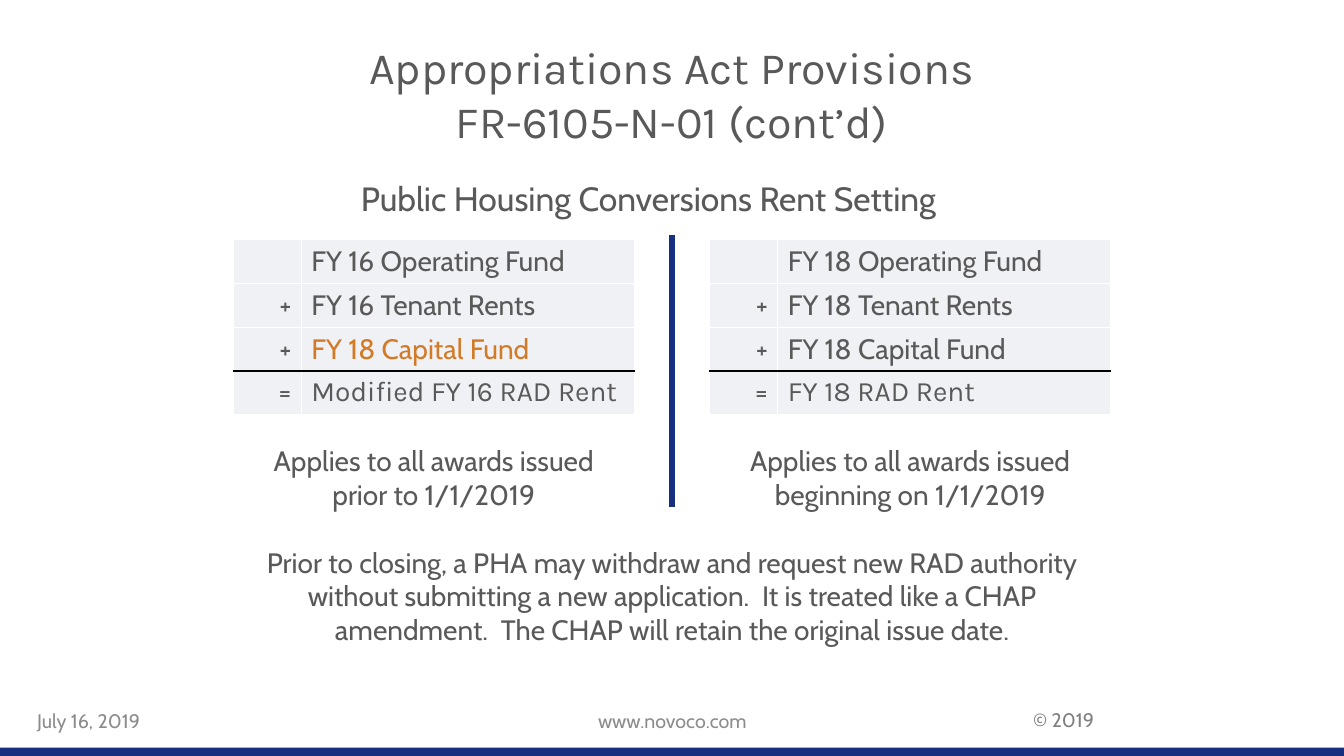
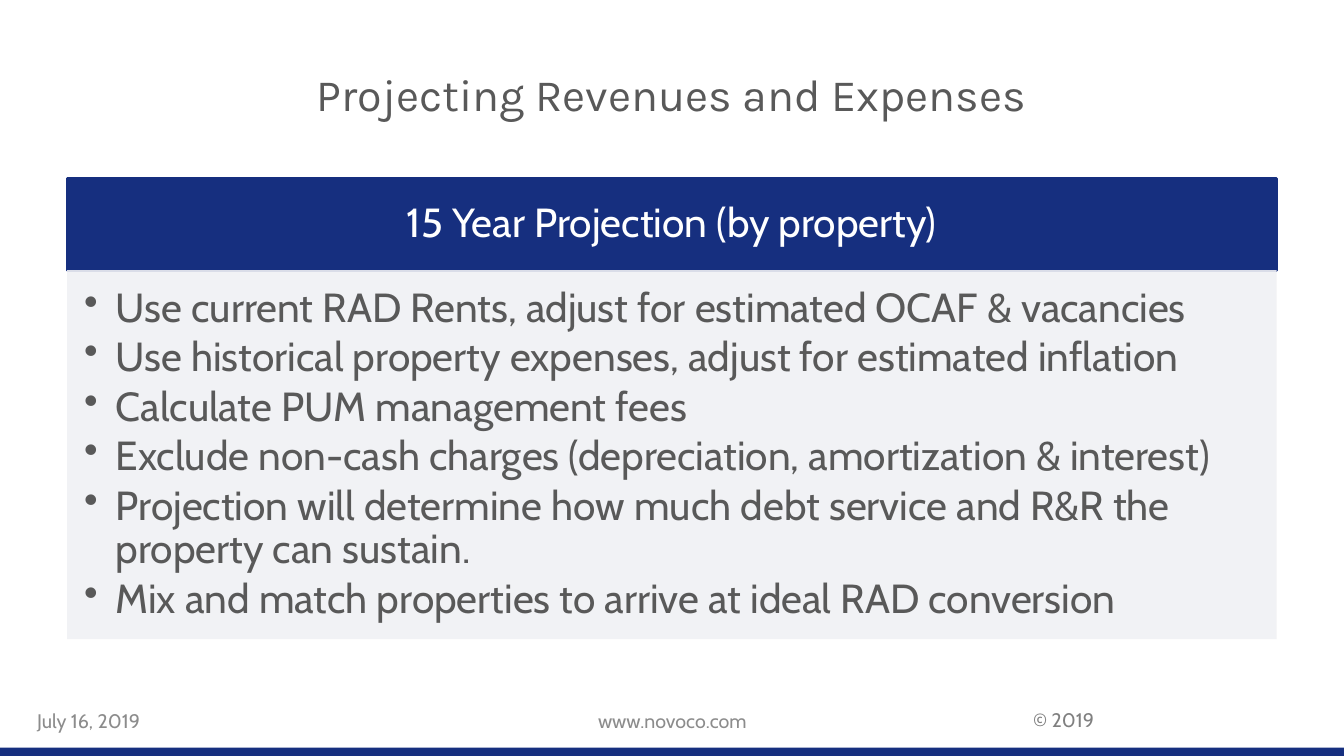
"""Two slides on RAD rent setting and on projecting revenues and expenses."""
from lxml import etree
from pptx import Presentation
from pptx.dml.color import RGBColor
from pptx.enum.shapes import MSO_CONNECTOR, MSO_SHAPE
from pptx.enum.text import MSO_ANCHOR, PP_ALIGN
from pptx.oxml.ns import qn
from pptx.util import Pt

LEFT, CENTER, RIGHT = PP_ALIGN.LEFT, PP_ALIGN.CENTER, PP_ALIGN.RIGHT
TOP, MIDDLE = MSO_ANCHOR.TOP, MSO_ANCHOR.MIDDLE
RECTANGLE, STRAIGHT = MSO_SHAPE.RECTANGLE, MSO_CONNECTOR.STRAIGHT

NAVY = RGBColor(0x16, 0x2F, 0x7F)
PALE = RGBColor(0xF0, 0xF1, 0xF4)
ORANGE = RGBColor(0xD3, 0x7A, 0x26)
WHITE = RGBColor(0xFF, 0xFF, 0xFF)
BLACK = RGBColor(0x00, 0x00, 0x00)
TEXT_GRAY = RGBColor(0x59, 0x59, 0x59)
FOOTER_GRAY = RGBColor(0x8C, 0x8C, 0x8C)
COPYRIGHT_GRAY = RGBColor(0x80, 0x80, 0x80)
BODY_FONT, TITLE_FONT = "Cabin", "Karla"


def add_span(para, text, size, color=TEXT_GRAY, font=BODY_FONT):
    span = para.add_run()
    span.text = text
    span.font.size = Pt(size)
    span.font.name = font
    span.font.color.rgb = color


def add_box(slide, place, lines, size, color=TEXT_GRAY, font=BODY_FONT,
            align=CENTER, anchor=TOP, wrap=True):
    box = slide.shapes.add_textbox(*map(Pt, place))
    frame = box.text_frame
    frame.word_wrap = wrap
    frame.vertical_anchor = anchor
    para = frame.paragraphs[0]
    para.alignment = align
    for index, line in enumerate(lines):
        if index:
            para.add_line_break()
        add_span(para, line, size, color, font)


deck = Presentation()
deck.slide_width, deck.slide_height = Pt(960), Pt(540)
blank = deck.slide_layouts[6]

titles = [
    ["Appropriations Act Provisions", "FR-6105-N-01 (cont’d)"],
    ["Projecting Revenues and Expenses"],
]
slides = []
for title in titles:
    slide = deck.slides.add_slide(blank)
    slides.append(slide)
    band = slide.shapes.add_shape(RECTANGLE, Pt(-2), Pt(534), Pt(964), Pt(6.5))
    band.shadow.inherit = False
    band.fill.solid()
    band.fill.fore_color.rgb = NAVY
    band.line.fill.background()
    add_box(slide, (730.8, 501.8, 62, 24.5), ["© 2019"], 14, COPYRIGHT_GRAY,
            align=LEFT, wrap=False)
    add_box(slide, (48, 21.6, 864, 90), title, 32, font=TITLE_FONT, anchor=MIDDLE)
    add_box(slide, (19.4, 500.4, 224, 28.8), ["July 16, 2019"], 14, FOOTER_GRAY,
            align=LEFT, anchor=MIDDLE)
    add_box(slide, (328.3, 500.4, 304, 28.8), ["www.novoco.com"], 14, FOOTER_GRAY,
            anchor=MIDDLE)

rent_slide, projection_slide = slides

add_box(rent_slide, (250.6, 123.8, 434, 36), ["Public Housing Conversions Rent Setting"],
        24, align=LEFT, wrap=False)

signs = ["", "+", "+", "="]
rent_columns = [
    (166.7, ["FY 16 Operating Fund", "FY 16 Tenant Rents", "FY 18 Capital Fund",
             "Modified FY 16 RAD Rent"], ORANGE,
     "Applies to all awards issued prior to 1/1/2019"),
    (507, ["FY 18 Operating Fund", "FY 18 Tenant Rents", "FY 18 Capital Fund",
           "FY 18 RAD Rent"], TEXT_GRAY,
     "Applies to all awards issued beginning on 1/1/2019"),
]
capital_row, total_row = 2, 3
for left, labels, capital_color, caption in rent_columns:
    table = rent_slide.shapes.add_table(
        4, 2, Pt(left), Pt(171.3), Pt(286.4), Pt(124.8)).table
    table.first_row = table.horz_banding = False
    table.columns[0].width, table.columns[1].width = Pt(48.6), Pt(237.8)
    for row, (sign, label) in enumerate(zip(signs, labels)):
        table.rows[row].height = Pt(31.2)
        for column, text in enumerate((sign, label)):
            cell = table.cell(row, column)
            cell.vertical_anchor = MIDDLE if column == 0 else TOP
            for side in "LRTB":
                is_sum_line = (row, side) in ((capital_row, "B"), (total_row, "T"))
                border = etree.SubElement(
                    cell._tc.get_or_add_tcPr(), qn("a:ln" + side), w=str(Pt(1)))
                paint = etree.SubElement(border, qn("a:solidFill"))
                etree.SubElement(paint, qn("a:srgbClr"),
                                 val=str(BLACK if is_sum_line else WHITE))
            cell.fill.solid()
            cell.fill.fore_color.rgb = PALE
            para = cell.text_frame.paragraphs[0]
            if column == 0:
                para.alignment = RIGHT
                if text:
                    add_span(para, text, 18)
            else:
                add_span(para, text, 20,
                         capital_color if row == capital_row else TEXT_GRAY,
                         TITLE_FONT if row == total_row else BODY_FONT)
    add_box(rent_slide, (left, 313.2, 286.4, 55.4), [caption], 20)

divider = rent_slide.shapes.add_connector(STRAIGHT, Pt(480), Pt(168), Pt(480), Pt(362))
divider.line.color.rgb = NAVY
divider.line.width = Pt(4.5)
etree.SubElement(divider._element.spPr, qn("a:effectLst"))

add_box(rent_slide, (166.7, 386, 627, 80),
        ["Prior to closing, a PHA may withdraw and request new RAD authority without "
         "submitting a new application.  It is treated like a CHAP amendment.  The CHAP "
         "will retain the original issue date."], 20)

header = projection_slide.shapes.add_shape(RECTANGLE, Pt(48), Pt(127.5), Pt(864), Pt(65.5))
body = projection_slide.shapes.add_shape(RECTANGLE, Pt(48), Pt(193), Pt(864), Pt(263.5))
for panel, color in ((header, NAVY), (body, PALE)):
    panel.shadow.inherit = False
    panel.fill.solid()
    panel.fill.fore_color.rgb = color
    panel.text_frame.word_wrap = True
header.line.color.rgb = NAVY
header.line.width = Pt(2)
body.line.fill.background()
body_color = body._element.spPr.find(qn("a:solidFill")).find(qn("a:srgbClr"))
etree.SubElement(body_color, qn("a:alpha"), val="90000")

header.text_frame.vertical_anchor = MIDDLE
para = header.text_frame.paragraphs[0]
para.alignment = CENTER
para.line_spacing = 0.9
add_span(para, "15 Year Projection (by property)", 29, WHITE)

frame = body.text_frame
frame.vertical_anchor = TOP
frame.margin_left = frame.margin_top = Pt(12.2)
frame.margin_right, frame.margin_bottom = Pt(16.5), Pt(18)
steps = [
    "Use current RAD Rents, adjust for estimated OCAF & vacancies",
    "Use historical property expenses, adjust for estimated inflation",
    "Calculate PUM management fees",
    "Exclude non-cash charges (depreciation, amortization & interest)",
    "Projection will determine how much debt service and R&R the property can sustain.",
    "Mix and match properties to arrive at ideal RAD conversion",
]
for index, step in enumerate(steps):
    para = frame.add_paragraph() if index else frame.paragraphs[0]
    para.level = 1
    para.alignment = LEFT
    para.line_spacing = 0.9
    para.space_after = Pt(4)
    properties = para._p.get_or_add_pPr()
    properties.set("marL", str(Pt(22.5)))
    properties.set("indent", str(Pt(-22.5)))
    etree.SubElement(properties, qn("a:buChar"), char="•")
    add_span(para, step, 29)

deck.save("out.pptx")
